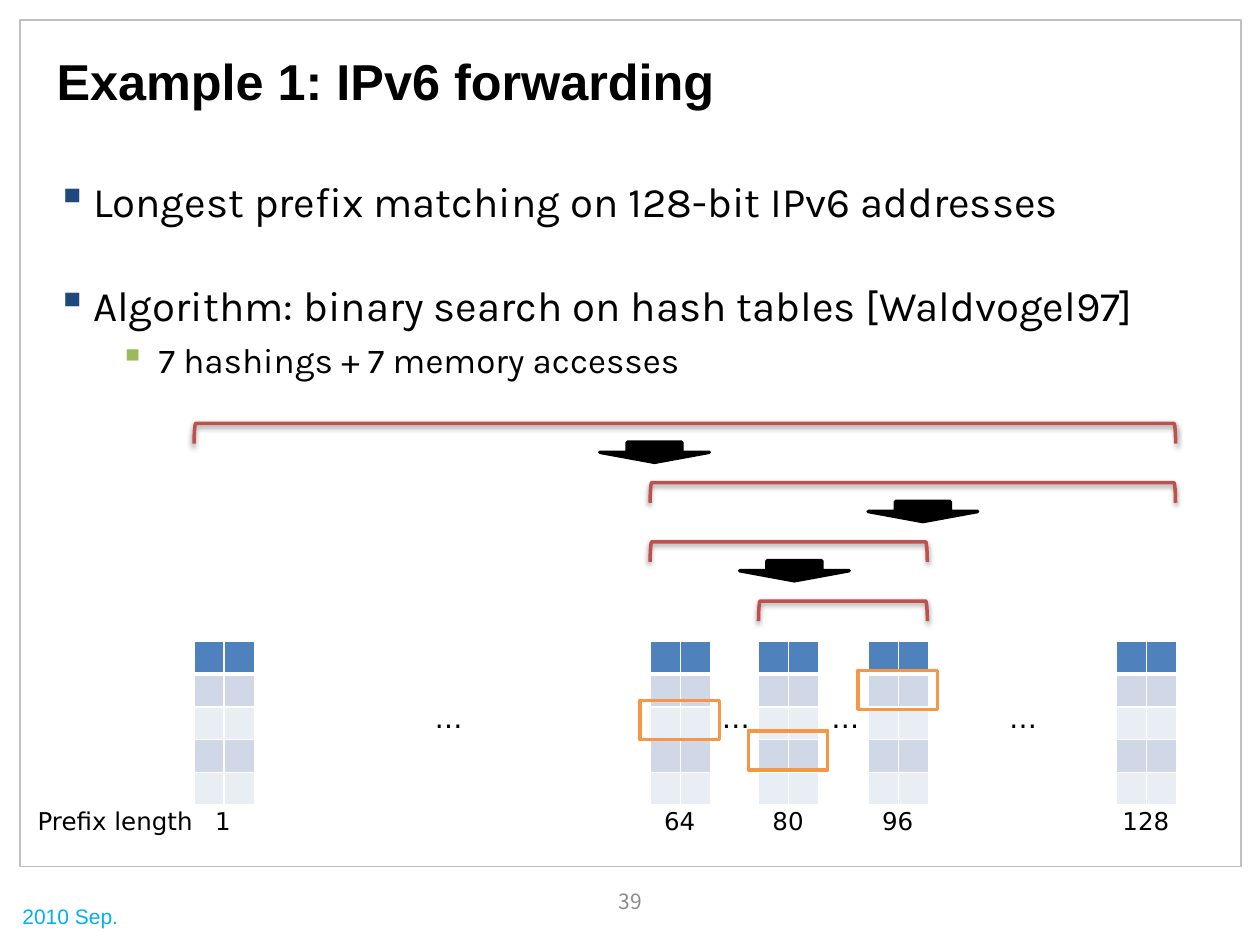
import pptx
import pptx.util
import pptx.oxml
import pptx.oxml.ns
import pptx.dml.color
import pptx.enum.shapes
import pptx.enum.text

Inches, Pt = pptx.util.Inches, pptx.util.Pt
KIND = pptx.enum.shapes.MSO_SHAPE
ALIGN = pptx.enum.text.PP_ALIGN
ANCHOR = pptx.enum.text.MSO_ANCHOR
NS = pptx.oxml.ns.nsdecls("a")

HEX = dict(black="000000", white="FFFFFF", frame="BFBFBF", date="00B0F0",
           page="8C8C8C", navy="1F497D", green="9BBB59", head="4F81BD",
           dark="D0D8E8", light="E9EDF4", red="C0504D", orange="F79646")

# Content: text, size, space before, left margin, hang, bullet colour
BODY = [
    ("Longest prefix matching on 128-bit IPv6 addresses", 24, 0, 0.29, 0.29, "navy"),
    ("Algorithm: binary search on hash tables [Waldvogel97]", 24, 30.8, 0.29, 0.29, "navy"),
    ("7 hashings + 7 memory accesses", 20, 5, 0.81, 0.31, "green"),
]
TABLES = {1: 1.54, 64: 5.16, 80: 6.02, 96: 6.89, 128: 8.86}  # prefix length: left
ROWS = ["head", "dark", "light", "dark", "light"]
DOTS = [3.35, 5.63, 6.5, 7.91]
RANGES = [(1, 128), (64, 128), (64, 96), (80, 96)]  # search range at each step
ARROWS = [4.76, 6.89, 5.87]
HITS = [(64, 5.56), (96, 5.32), (80, 5.8)]  # prefix length, top of the hit

TOP, CELL, ROW = 5.09, 0.235, 0.26
WIDE = 2 * CELL
STEP_TOP, STEP, DEPTH = 3.36, 0.47, 0.16

deck = pptx.Presentation()
deck.slide_width, deck.slide_height = Inches(10), Inches(7.5)
slide = deck.slides.add_slide(deck.slide_layouts[6])


def color(name):
    return pptx.dml.color.RGBColor.from_string(HEX[name])


def xml(body):
    return pptx.oxml.parse_xml(body.replace(" NS", " " + NS, 1))


def add_text(para, text, size=14, font="DejaVu Sans", ink="black", bold=False):
    run = para.add_run()
    run.text = text
    run.font.size, run.font.name, run.font.bold = Pt(size), font, bold
    run.font.color.rgb = color(ink)


def add_box(x, y, w, h, text=None, align=ALIGN.LEFT, anchor=ANCHOR.TOP,
            wrap=True, **style):
    frame = slide.shapes.add_textbox(*map(Inches, (x, y, w, h))).text_frame
    frame.word_wrap, frame.vertical_anchor = wrap, anchor
    para = frame.paragraphs[0]
    para.alignment = align
    if text:
        add_text(para, text, **style)
    return frame


def add_shape(kind, x, y, w, h, line, width=2, fill=None):
    shape = slide.shapes.add_shape(kind, *map(Inches, (x, y, w, h)))
    shape.shadow.inherit = False
    shape.line.color.rgb, shape.line.width = color(line), Pt(width)
    if fill:
        shape.fill.solid()
        shape.fill.fore_color.rgb = color(fill)
    else:
        shape.fill.background()
    return shape


def add_table(left):
    area = map(Inches, (left, TOP, WIDE, ROW * len(ROWS)))
    table = slide.shapes.add_table(len(ROWS), 2, *area).table
    for col in table.columns:
        col.width = Inches(CELL)
    for i, tone in enumerate(ROWS):
        table.rows[i].height = Inches(ROW)
        for cell in table.rows[i].cells:
            cell.margin_top = cell.margin_bottom = Inches(0.02)
            para = cell.text_frame.paragraphs[0]
            para._p.append(xml('<a:endParaRPr NS sz="800"/>'))
            props = cell._tc.get_or_add_tcPr()
            for side in "LRTB":
                # The rule between header and body is thicker
                thick = (i, side) in ((0, "B"), (1, "T"))
                props.append(xml(
                    f'<a:ln{side} NS w="{Pt(3 if thick else 1)}"><a:solidFill>'
                    f'<a:srgbClr val="{HEX["white"]}"/></a:solidFill></a:ln{side}>'))
            cell.fill.solid()
            cell.fill.fore_color.rgb = color(tone)


def add_bracket(left, right, mid):
    # Drawn upright, then turned so that it opens downwards
    span = right - left
    shape = add_shape(KIND.RIGHT_BRACKET, (left + right - DEPTH) / 2,
                      mid - span / 2, DEPTH, span, "red")
    shape.rotation = 270
    effects = shape._element.spPr.find(pptx.oxml.ns.qn("a:effectLst"))
    effects.append(xml(
        f'<a:outerShdw NS blurRad="{Pt(3.1)}" dist="{Pt(1.6)}" dir="5400000" '
        f'rotWithShape="0"><a:srgbClr val="{HEX["black"]}">'
        '<a:alpha val="38000"/></a:srgbClr></a:outerShdw>'))


# Frame, footer and title
add_shape(KIND.RECTANGLE, 0.16, 0.16, 9.69, 6.72, "frame", 0.75)
add_box(0.08, 6.92, 0.97, 0.5, "2010 Sep.", anchor=ANCHOR.BOTTOM, wrap=False,
        size=12, font="Arial", ink="date")
add_box(0.35, 0.36, 9.29, 0.55, "Example 1: IPv6 forwarding",
        anchor=ANCHOR.MIDDLE, size=28.8, font="Arial", bold=True)
add_box(3.84, 6.95, 2.33, 0.4, "39", align=ALIGN.CENTER, anchor=ANCHOR.MIDDLE,
        size=12, font="Noto Sans CJK KR", ink="page")

# Bullets
body = add_box(0.35, 1.31, 9.29, 1.81)
body.margin_top = Inches(0.08)
for i, (text, size, gap, left, hang, tint) in enumerate(BODY):
    para = body.add_paragraph() if i else body.paragraphs[0]
    para.space_before = Pt(gap)
    props = para._p.get_or_add_pPr()
    props.set("marL", str(Inches(left)))
    props.set("indent", str(-Inches(hang)))
    props.append(xml(f'<a:buClr NS><a:srgbClr val="{HEX[tint]}"/></a:buClr>'))
    props.append(xml('<a:buChar NS char="▪"/>'))
    add_text(para, text, size=size, font="Karla")

# Hash tables and the gaps between them
for left in TABLES.values():
    add_table(left)
for left in DOTS:
    add_box(left, 5.51, 0.39, 0.37, "…", size=16)

# Prefix lengths
first = add_box(0.2, 6.35, 1.81, 0.34).paragraphs[0]
first._p.get_or_add_pPr().append(
    xml(f'<a:tabLst NS><a:tab pos="{Inches(1.41)}" algn="l"/></a:tabLst>'))
add_text(first, "Prefix length\t1")
for length, left in list(TABLES.items())[1:]:
    wide = 0.63 if length > 99 else WIDE
    add_box(left + (WIDE - wide) / 2, 6.35, wide, 0.34, str(length),
            align=ALIGN.CENTER)

# Search steps
for i, (low, high) in enumerate(RANGES):
    add_bracket(TABLES[low], TABLES[high] + WIDE,
                STEP_TOP + i * STEP + DEPTH / 2)
for length, top in HITS:
    add_shape(KIND.RECTANGLE, TABLES[length] - 0.08, top, 0.63, 0.31, "orange")
for i, left in enumerate(ARROWS):
    add_shape(KIND.DOWN_ARROW, left, STEP_TOP + 0.15 + i * STEP, 0.87, DEPTH,
              "black", fill="black")

deck.save("out.pptx")
